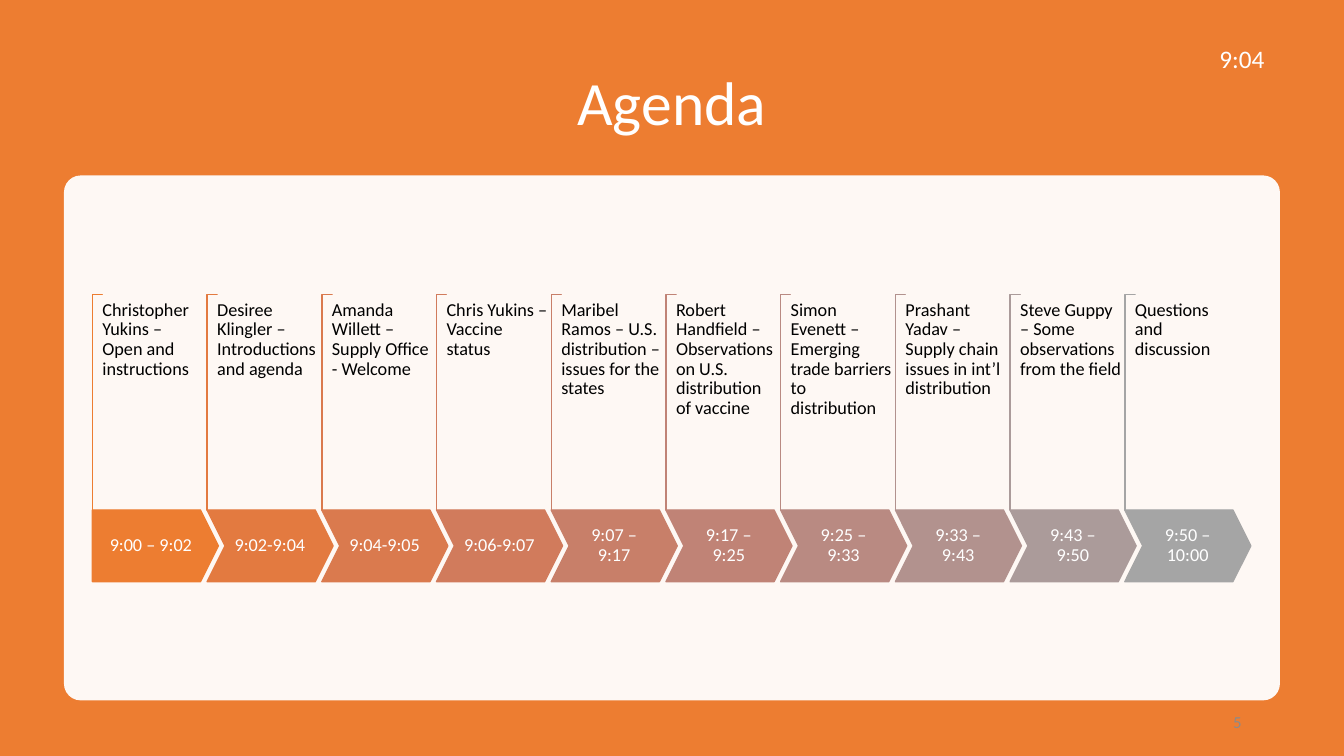
from lxml import etree
from pptx import Presentation
from pptx.dml.color import RGBColor
from pptx.enum.shapes import MSO_SHAPE
from pptx.enum.text import MSO_ANCHOR, MSO_AUTO_SIZE, PP_ALIGN
from pptx.oxml.ns import qn
from pptx.util import Pt

RECTANGLE = MSO_SHAPE.RECTANGLE
ROUNDED = MSO_SHAPE.ROUNDED_RECTANGLE
CORNER = MSO_SHAPE.CORNER
PENTAGON = MSO_SHAPE.PENTAGON
CHEVRON = MSO_SHAPE.CHEVRON
TOP = MSO_ANCHOR.TOP
MIDDLE = MSO_ANCHOR.MIDDLE
LEFT = PP_ALIGN.LEFT
CENTER = PP_ALIGN.CENTER
RIGHT = PP_ALIGN.RIGHT
NO_AUTOFIT = MSO_AUTO_SIZE.NONE

FONT = "Calibri"
COLORS = {"orange": "ED7D31", "white": "FFFFFF", "black": "000000", "gray": "8B8B8B"}

AGENDA = [
    ("9:00 – 9:02", "Christopher Yukins – Open and instructions", "ED7D31"),
    ("9:02-9:04", "Desiree Klingler – Introductions and agenda", "E37A40"),
    ("9:04-9:05", "Amanda Willett – Supply Office - Welcome", "DA7A4E"),
    ("9:06-9:07", "Chris Yukins – Vaccine status", "D17B5C"),
    ("9:07 – 9:17", "Maribel Ramos – U.S. distribution – issues for the states", "C87F69"),
    ("9:17 – 9:25", "Robert Handfield – Observations on U.S. distribution of vaccine", "C08376"),
    ("9:25 – 9:33", "Simon Evenett – Emerging trade barriers to distribution", "B98A82"),
    ("9:33 – 9:43", "Prashant Yadav – Supply chain issues in int’l distribution", "B2928E"),
    ("9:43 – 9:50", "Steve Guppy – Some observations from the field", "AB9B9A"),
    ("9:50 – 10:00", "Questions and discussion", "A5A5A5"),
]
FIRST_LEFT = 66
STEP = 81.94
BAND_TOP = 364.3
BAND_HEIGHT = 51.2
ARROW_WIDTH = 90
TICK = 7.2
BRACKET_HEIGHT = 154


def write(frame, text, size=13, color=COLORS["white"], align=LEFT, anchor=TOP,
          spacing=None, insets=(7.2, 3.6)):
    frame.word_wrap = True
    frame.auto_size = NO_AUTOFIT
    frame.vertical_anchor = anchor
    frame.margin_left = frame.margin_right = Pt(insets[0])
    frame.margin_top = frame.margin_bottom = Pt(insets[1])
    paragraph = frame.paragraphs[0]
    paragraph.alignment = align
    paragraph.line_spacing = spacing
    run = paragraph.add_run()
    run.text = text
    run.font.name = FONT
    run.font.size = Pt(size)
    run.font.color.rgb = RGBColor.from_string(color)


def add_label(slide, box, text, **style):
    label = slide.shapes.add_textbox(*map(Pt, box))
    write(label.text_frame, text, **style)


def add_figure(slide, kind, box, fill, line=None, adjustments=()):
    figure = slide.shapes.add_shape(kind, *map(Pt, box))
    figure.shadow.inherit = False
    figure.fill.solid()
    figure.fill.fore_color.rgb = RGBColor.from_string(fill)
    if line:
        figure.line.color.rgb = RGBColor.from_string(line)
        figure.line.width = Pt(1)
    else:
        figure.line.fill.background()
    for index, value in enumerate(adjustments):
        figure.adjustments[index] = value
    return figure


def add_backdrop(slide):
    backdrop = add_figure(slide, RECTANGLE, (0, 0, 960, 540), COLORS["orange"])
    slide.shapes.element.insert(2, backdrop.element)
    card = add_figure(slide, ROUNDED, (45.7, 125.3, 868.6, 375),
                      COLORS["white"], adjustments=[0.032])
    white = card.element.spPr.find(qn("a:solidFill")).find(qn("a:srgbClr"))
    etree.SubElement(white, qn("a:alpha")).set("val", "95000")


def add_title(slide):
    title = slide.shapes.title
    title.left, title.top, title.width, title.height = map(Pt, (66, 36, 828, 79.2))
    write(title.text_frame, "Agenda", size=44, align=CENTER, anchor=MIDDLE, spacing=0.9)


def add_bracket(slide, left, color):
    center_x = left + TICK / 2
    center_y = BAND_TOP - BRACKET_HEIGHT / 2
    box = (center_x - BRACKET_HEIGHT / 2, center_y - TICK / 2, BRACKET_HEIGHT, TICK)
    bracket = add_figure(slide, CORNER, box, COLORS["white"], color, [0.01, 0.01])
    bracket.rotation = 90


def add_session(slide, position, time, topic, color):
    left = FIRST_LEFT + position * STEP
    first = position == 0
    add_bracket(slide, left, color)
    add_figure(slide, PENTAGON if first else CHEVRON,
               (left, BAND_TOP, ARROW_WIDTH, BAND_HEIGHT), color, color, [0.25])
    time_left, time_width = (left, 83.5) if first else (left + 12.8, 64.1)
    add_label(slide, (time_left, BAND_TOP, time_width, BAND_HEIGHT), time,
              align=CENTER, anchor=MIDDLE, spacing=0.9, insets=(6.5, 13))
    add_label(slide, (left + TICK, 214.6, 73.6, 110), topic,
              color=COLORS["black"], spacing=0.9, insets=(0, 0))


def main():
    deck = Presentation()
    deck.slide_width, deck.slide_height = Pt(960), Pt(540)
    slide = deck.slides.add_slide(deck.slide_layouts[5])
    add_backdrop(slide)
    add_title(slide)
    for position, session in enumerate(AGENDA):
        add_session(slide, position, *session)
    add_label(slide, (864, 27.4, 81.4, 29), "9:04", size=18)
    add_label(slide, (678, 501, 216, 28.8), "5", size=12, color=COLORS["gray"],
              align=RIGHT, anchor=MIDDLE)
    deck.save("out.pptx")


if __name__ == "__main__":
    main()
